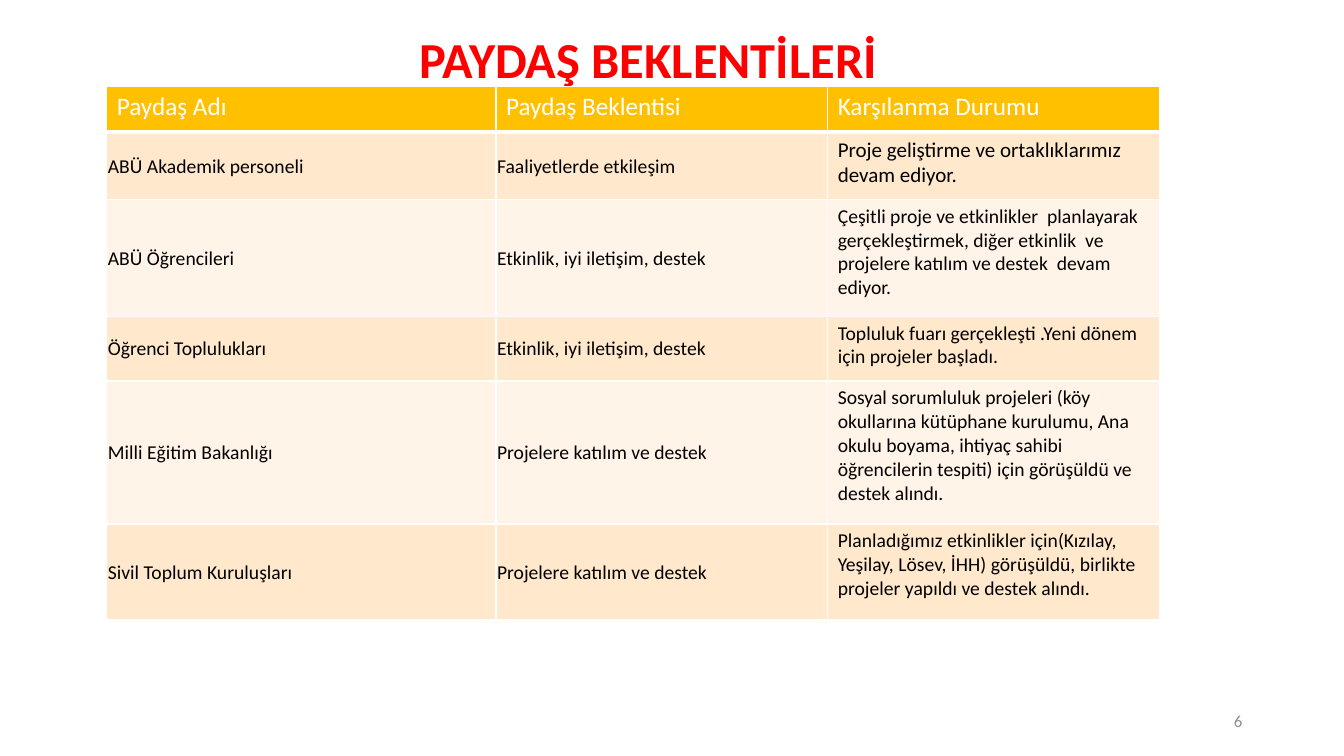
from lxml import etree
from pptx import Presentation
from pptx import util as u
from pptx.dml.color import RGBColor
from pptx.enum import text
from pptx.oxml import ns

COLORS = {
    "background": "FFFFFF", "title": "FF0000", "number": "8C8C8C",
    "header": "FFC000", "header_text": "FFFFFF", "body_text": "000000",
    "odd_row": "FFE8CC", "even_row": "FFF4E7", "border": "FFFFFF",
}
HEADINGS = ["Paydaş Adı", "Paydaş Beklentisi", "Karşılanma Durumu"]
STAKEHOLDERS = [
    ["ABÜ Akademik personeli", "Faaliyetlerde etkileşim",
     "Proje geliştirme ve ortaklıklarımız devam ediyor."],
    ["ABÜ Öğrencileri", "Etkinlik, iyi iletişim, destek",
     "Çeşitli proje ve etkinlikler  planlayarak  gerçekleştirmek, diğer etkinlik  ve "
     "projelere katılım ve destek  devam ediyor."],
    ["Öğrenci Toplulukları", "Etkinlik, iyi iletişim, destek",
     "Topluluk fuarı gerçekleşti .Yeni dönem için projeler başladı."],
    ["Milli Eğitim Bakanlığı", "Projelere katılım ve destek",
     "Sosyal sorumluluk projeleri (köy okullarına kütüphane kurulumu, Ana okulu boyama, "
     "ihtiyaç sahibi öğrencilerin tespiti) için görüşüldü ve destek alındı."],
    ["Sivil Toplum Kuruluşları", "Projelere katılım ve destek",
     "Planladığımız etkinlikler için(Kızılay, Yeşilay, Lösev, İHH) görüşüldü, birlikte "
     "projeler yapıldı ve destek alındı."],
]
COLUMN_WIDTHS = [3.86, 3.29, 3.29]
ROW_HEIGHTS = [0.45, 0.67, 1.16, 0.64, 1.42, 0.95]


class SlideBuilder:
    font_name = "Calibri"

    def __init__(self, presentation):
        self.slide = presentation.slides.add_slide(presentation.slide_layouts[5])
        fill = self.slide.background.fill
        fill.solid()
        fill.fore_color.rgb = RGBColor.from_string(COLORS["background"])

    def add_words(self, frame, words, size, color, bold=False, align=text.PP_ALIGN.LEFT):
        paragraph = frame.paragraphs[0]
        paragraph.alignment = align
        run = paragraph.add_run()
        run.text = words
        run.font.name = self.font_name
        run.font.size = u.Pt(size)
        run.font.bold = bold
        run.font.color.rgb = RGBColor.from_string(COLORS[color])

    def title(self, words, left, top, width, height):
        title = self.slide.shapes.title
        title.left, title.top = u.Inches(left), u.Inches(top)
        title.width, title.height = u.Inches(width), u.Inches(height)
        frame = title.text_frame
        frame.auto_size = text.MSO_AUTO_SIZE.SHAPE_TO_FIT_TEXT
        frame.vertical_anchor = text.MSO_ANCHOR.TOP
        self.add_words(frame, words, 36, "title", True, text.PP_ALIGN.CENTER)

    def slide_number(self, number, left, top, width, height):
        box = self.slide.shapes.add_textbox(*map(u.Inches, (left, top, width, height)))
        frame = box.text_frame
        frame.word_wrap = True
        frame.vertical_anchor = text.MSO_ANCHOR.MIDDLE
        self.add_words(frame, number, 12, "number", align=text.PP_ALIGN.RIGHT)

    def borders(self, cell, bottom):
        """Outline a cell with 1 pt lines, except for the given bottom width."""
        properties = cell._tc.get_or_add_tcPr()
        for side, width in {"L": 1, "R": 1, "T": 1, "B": bottom}.items():
            line = etree.SubElement(properties, ns.qn(f"a:ln{side}"), w=str(u.Pt(width)))
            solid = etree.SubElement(line, ns.qn("a:solidFill"))
            etree.SubElement(solid, ns.qn("a:srgbClr"), val=COLORS["border"])

    def cell(self, cell, words, size, color, fill, bottom=1):
        self.borders(cell, bottom)
        cell.fill.solid()
        cell.fill.fore_color.rgb = RGBColor.from_string(COLORS[fill])
        self.add_words(cell.text_frame, words, size, color)

    def table(self, left, top):
        lengths = left, top, sum(COLUMN_WIDTHS), sum(ROW_HEIGHTS)
        table = self.slide.shapes.add_table(
            len(ROW_HEIGHTS), len(COLUMN_WIDTHS), *map(u.Inches, lengths)).table
        for column, width in zip(table.columns, COLUMN_WIDTHS):
            column.width = u.Inches(width)
        for row, height in zip(table.rows, ROW_HEIGHTS):
            row.height = u.Inches(height)
        for column, heading in enumerate(HEADINGS):
            self.cell(table.cell(0, column), heading, 18, "header_text", "header", 3)
        for row, entries in enumerate(STAKEHOLDERS, 1):
            fill = "odd_row" if row % 2 else "even_row"
            for column, words in enumerate(entries):
                cell = table.cell(row, column)
                size = 15 if (row, column) == (1, 2) else 14
                self.cell(cell, words, size, "body_text", fill)
                if column < 2:
                    cell.vertical_anchor = text.MSO_ANCHOR.MIDDLE
                    cell.margin_left = cell.margin_right = cell.margin_top = u.Inches(0.01)
                    cell.margin_bottom = 0


def main():
    presentation = Presentation()
    presentation.slide_width = u.Inches(13.33)
    presentation.slide_height = u.Inches(7.5)
    builder = SlideBuilder(presentation)
    builder.title("PAYDAŞ BEKLENTİLERİ", 2.61, 0.23, 7.64, 0.71)
    builder.slide_number("6", 9.42, 6.95, 3, 0.4)
    builder.table(1.06, 0.86)
    presentation.save("out.pptx")


if __name__ == "__main__":
    main()
